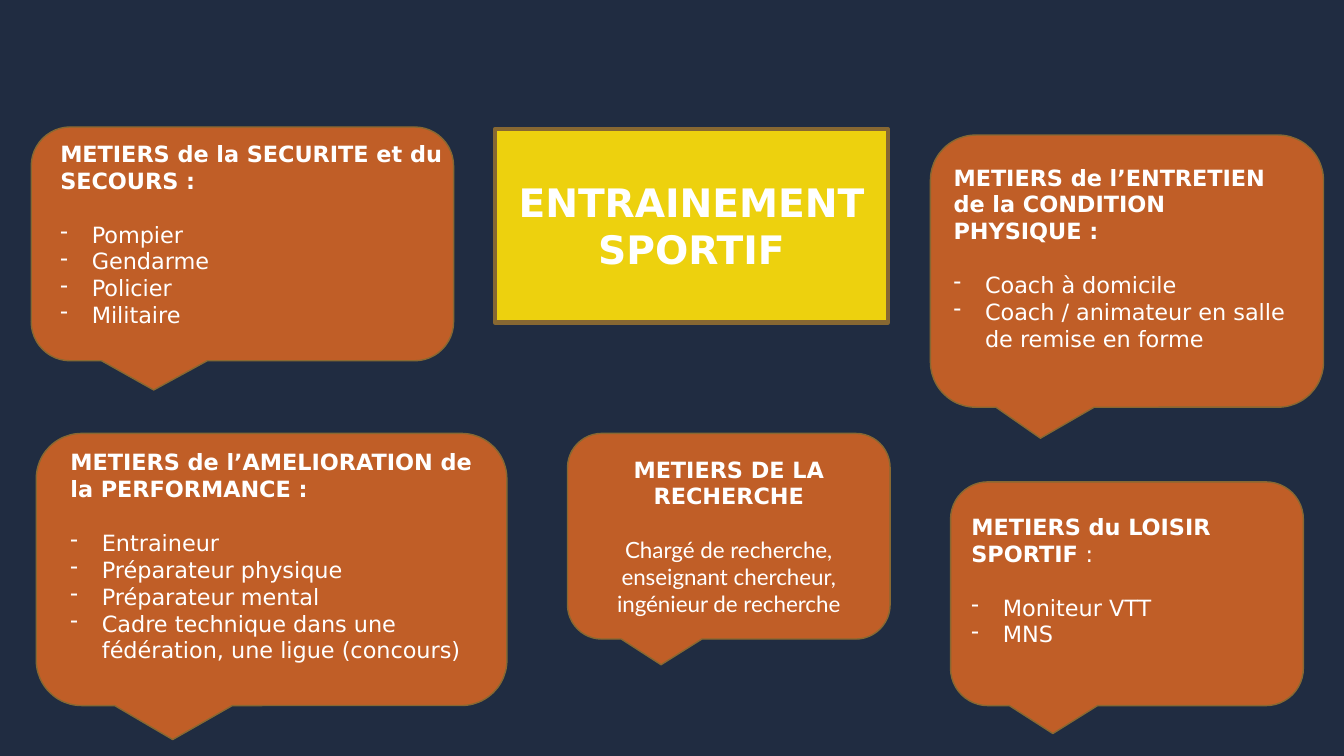
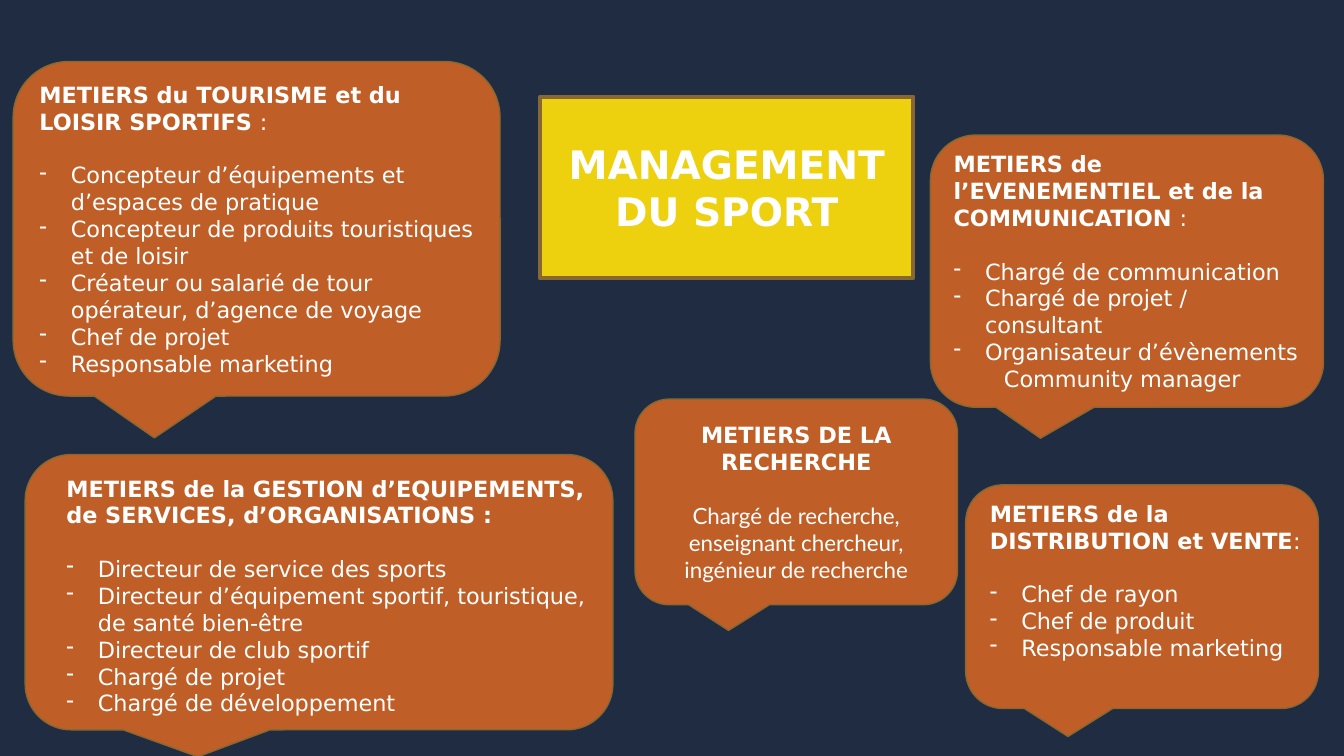
from lxml import etree
from pptx import Presentation
from pptx import util as u
from pptx.dml import color
from pptx.enum import shapes, text
from pptx.oxml import ns

# Shared look
NAVY, YELLOW, ORANGE, BROWN, WHITE = "202C41", "EDD10E", "C05E27", "876832", "FFFFFF"
MAIN_FONT, RESEARCH_FONT = "DejaVu Sans", "Lato"
TITLE_SIZE, TEXT_SIZE, LEADING = 28, 16, 1.2
TEXT_LINE = TEXT_SIZE * LEADING
INDENT = 22.5
LEFT, CENTER = text.PP_ALIGN.LEFT, text.PP_ALIGN.CENTER
DEFAULT_TAIL = (-0.21, 0.625)
TITLE_ONLY_LAYOUT = 5


def rgb(value):
    return color.RGBColor.from_string(value)


def points(*values):
    return [u.Pt(value) for value in values]


def paint(shape, fill, line_width):
    shape.fill.solid()
    shape.fill.fore_color.rgb = rgb(fill)
    shape.line.color.rgb = rgb(BROWN)
    shape.line.width = u.Pt(line_width)


def add_run(paragraph, content, size=TEXT_SIZE, bold=False, font=MAIN_FONT):
    run = paragraph.add_run()
    run.text = content
    run.font.name, run.font.size, run.font.bold = font, u.Pt(size), bold
    run.font.color.rgb = rgb(WHITE)


def write(frame, content, light="", size=TEXT_SIZE, bold=False, font=MAIN_FONT,
          align=LEFT, after=0, bullet=False, margin=0):
    """Add one paragraph; the light part follows the content in regular weight."""
    first = frame.paragraphs[0]
    paragraph = frame.add_paragraph() if first.runs else first
    paragraph.alignment = align
    paragraph.line_spacing = u.Pt(size * LEADING)
    paragraph.space_before, paragraph.space_after = points(0, after)
    add_run(paragraph, content, size, bold, font)
    if light:
        add_run(paragraph, light, size, False, font)
    properties = paragraph._p.get_or_add_pPr()
    if bullet:
        properties.set("marL", str(u.Pt(INDENT)))
        properties.set("indent", str(-u.Pt(INDENT)))
        etree.SubElement(properties, ns.qn("a:buChar")).set("char", "-")
    elif margin:
        properties.set("marL", str(u.Pt(margin)))


# Yellow title panel
def add_title(slide, box, content):
    title = slide.shapes.title
    title.left, title.top, title.width, title.height = points(*box)
    paint(title, YELLOW, 3)
    frame = title.text_frame
    frame.word_wrap = True
    frame.auto_size = text.MSO_AUTO_SIZE.NONE
    frame.vertical_anchor = text.MSO_ANCHOR.MIDDLE
    write(frame, content, size=TITLE_SIZE, bold=True, align=CENTER)


# Orange speech bubble
def add_bubble(slide, box, tail=DEFAULT_TAIL):
    bubble = slide.shapes.add_shape(
        shapes.MSO_SHAPE.ROUNDED_RECTANGULAR_CALLOUT, *points(*box))
    bubble.shadow.inherit = False
    bubble.adjustments[0], bubble.adjustments[1] = tail
    paint(bubble, ORANGE, 1)
    frame = bubble.text_frame
    frame.word_wrap = True
    frame.vertical_anchor = text.MSO_ANCHOR.MIDDLE
    return bubble


# Bubble with a heading and a list of jobs
def add_jobs(slide, box, heading, jobs, light="", tail=DEFAULT_TAIL,
             label=None, lift=0, last=""):
    """label: left and top inside the bubble, and width, of a separate text box.
    lift: extra space under centred text. last: closing line without a dash."""
    bubble = add_bubble(slide, box, tail)
    frame = bubble.text_frame
    if label:
        dx, dy, width = label
        left, top, _, height = box
        frame = slide.shapes.add_textbox(
            *points(left + dx, top + dy, width, height - dy)).text_frame
        frame.word_wrap = True
    frame.margin_bottom = u.Pt(3.6 + lift)
    write(frame, heading, light, bold=True, after=TEXT_LINE)
    for job in jobs:
        write(frame, job, bullet=True)
    if last:
        write(frame, last, margin=36)


# Bubble on research, the same on each slide
def add_research(slide, left, top):
    frame = add_bubble(slide, (left, top, 230.4, 146.9)).text_frame
    write(frame, "METIERS DE LA RECHERCHE", bold=True, align=CENTER, after=TEXT_LINE)
    write(frame, "Chargé de recherche, enseignant chercheur, ingénieur de recherche",
          font=RESEARCH_FONT, align=CENTER)


UPPER_RIGHT = dict(box=(664.6, 96.5, 280.8, 194.4), tail=(-0.22, 0.614))


def build_training(slide):
    add_title(slide, (353.5, 92.2, 280.8, 138.2), "ENTRAINEMENT SPORTIF")
    add_jobs(slide, (22.3, 90.7, 301.7, 167), "METIERS de la SECURITE et du SECOURS :",
             ["Pompier", "Gendarme", "Policier", "Militaire"], label=(13.7, 5.8, 288))
    add_jobs(slide, (25.9, 309.6, 336.2, 194.4),
             "METIERS de l’AMELIORATION de la PERFORMANCE :",
             ["Entraineur", "Préparateur physique", "Préparateur mental",
              "Cadre technique dans une fédération, une ligue (concours)"],
             label=(17.3, 7.2, 310.3))
    add_jobs(slide, heading="METIERS de l’ENTRETIEN de la CONDITION PHYSIQUE :",
             jobs=["Coach à domicile", "Coach / animateur en salle de remise en forme"],
             lift=TEXT_LINE, **UPPER_RIGHT)
    add_jobs(slide, (679, 344.2, 252, 159.8), "METIERS du LOISIR SPORTIF ",
             ["Moniteur VTT", "MNS"], light=":", lift=TEXT_LINE)
    add_research(slide, 405.4, 309.6)


def build_management(slide):
    add_title(slide, (385.9, 69.1, 266.4, 129.6), "MANAGEMENT DU SPORT")
    add_jobs(slide, (9.4, 43.9, 347.8, 239), "METIERS du TOURISME et du LOISIR SPORTIFS ",
             ["Concepteur d’équipements et d’espaces de pratique",
              "Concepteur de produits touristiques et de loisir",
              "Créateur ou salarié de tour opérateur, d’agence de voyage",
              "Chef de projet", "Responsable marketing"], light=":")
    add_jobs(slide, (18, 324.7, 419.8, 196.6),
             "METIERS de la GESTION d’EQUIPEMENTS, de SERVICES, d’ORGANISATIONS :",
             ["Directeur de service des sports",
              "Directeur d’équipement sportif, touristique, de santé bien-être",
              "Directeur de club sportif", "Chargé de projet", "Chargé de développement"],
             tail=(-0.206, 0.598), label=(22.3, 10.8, 396.7))
    add_jobs(slide, heading="METIERS de l’EVENEMENTIEL et de la COMMUNICATION ",
             jobs=["Chargé de communication", "Chargé de projet / consultant",
                   "Organisateur d’évènements"],
             light=":", last="Community manager", **UPPER_RIGHT)
    add_jobs(slide, (689.8, 346.3, 252, 159.8), "METIERS de la DISTRIBUTION et VENTE",
             ["Chef de rayon", "Chef de produit", "Responsable marketing"],
             light=":", label=(10.1, 7.2, 245.5))
    add_research(slide, 453.6, 285.1)


def main():
    presentation = Presentation()
    presentation.slide_width, presentation.slide_height = points(960, 540)
    background = presentation.slide_master.background.fill
    background.solid()
    background.fore_color.rgb = rgb(NAVY)
    layout = presentation.slide_layouts[TITLE_ONLY_LAYOUT]
    for build in (build_training, build_management):
        build(presentation.slides.add_slide(layout))
    presentation.save("out.pptx")


if __name__ == "__main__":
    main()
